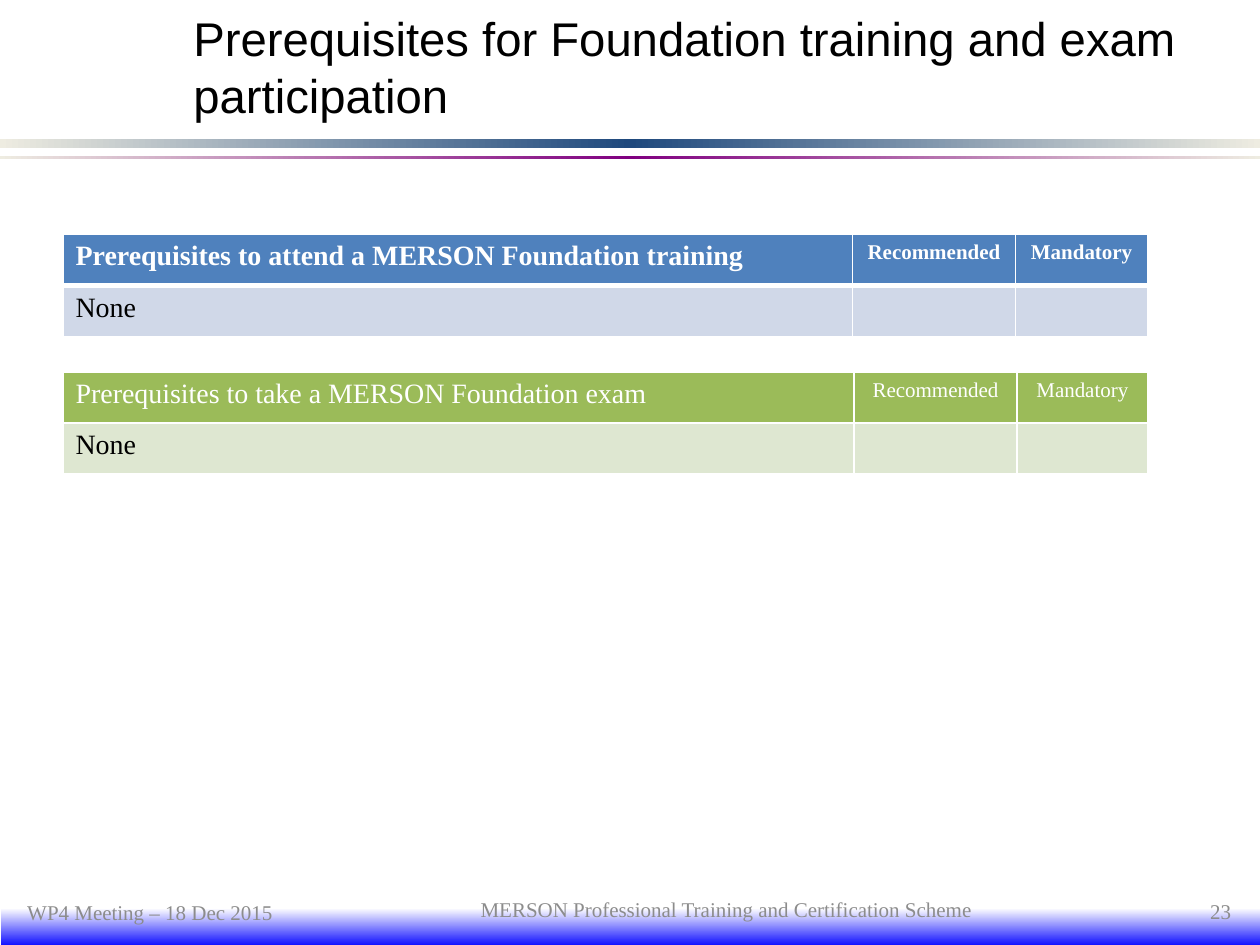
from lxml.etree import SubElement
from pptx import Presentation
from pptx.dml.color import RGBColor
from pptx.enum.shapes import MSO_SHAPE
from pptx.enum.text import MSO_ANCHOR, PP_ALIGN
from pptx.oxml.ns import qn
from pptx.util import Cm, Pt

COLOURS = {
    "white": "FFFFFF", "black": "000000", "grey": "8C8C8C",
    "footer blue": "0000FF", "cream": "EEECE1", "navy": "1F497D", "purple": "800080",
    "blue": "4F81BD", "pale blue": "D0D8E8", "green": "9BBB59", "pale green": "DEE7D1",
}


def colour(name):
    return RGBColor.from_string(COLOURS[name])


class SlideBuilder:
    """Holds the text style and the page being filled."""
    font = "Times New Roman"

    def __init__(self, page):
        self.page = page

    def style(self, frame, size, shade, align=PP_ALIGN.LEFT, bold=False, font=None):
        for para in frame.paragraphs:
            para.alignment = align
            for span in para.runs:
                span.font.name = font or self.font
                span.font.size = Pt(size)
                span.font.bold = bold
                span.font.color.rgb = colour(shade)

    def text(self, words, left, top, width, height, size, shade, **style):
        box = self.page.shapes.add_textbox(Cm(left), Cm(top), Cm(width), Cm(height))
        frame = box.text_frame
        frame.word_wrap = True
        frame.vertical_anchor = MSO_ANCHOR.MIDDLE
        frame.margin_left = frame.margin_right = Cm(0.2)
        frame.text = words
        self.style(frame, size, shade, **style)

    def gradient_bar(self, top, height, shades, angle=0, left=0):
        bar = self.page.shapes.add_shape(
            MSO_SHAPE.RECTANGLE, Cm(left), Cm(top), Cm(25.4), Cm(height))
        bar.shadow.inherit = False
        bar.line.fill.background()
        bar.fill.gradient()
        bar.fill.gradient_angle = angle
        # Replace the default stops with evenly spaced ones
        stops = bar.element.spPr.find(qn("a:gradFill")).find(qn("a:gsLst"))
        for stop in list(stops):
            stops.remove(stop)
        for index, shade in enumerate(shades):
            position = 100000 * index // (len(shades) - 1)
            stop = SubElement(stops, qn("a:gs"), pos=str(position))
            SubElement(stop, qn("a:srgbClr"), val=COLOURS[shade])

    def borders(self, cell, top, bottom):
        # Called before the fill, which must follow the lines
        properties = cell._tc.get_or_add_tcPr()
        for side, width in {"L": 1, "R": 1, "T": top, "B": bottom}.items():
            line = SubElement(properties, qn(f"a:ln{side}"), w=str(Pt(width)))
            fill = SubElement(line, qn("a:solidFill"))
            SubElement(fill, qn("a:srgbClr"), val=COLOURS["white"])

    def table(self, top, widths, heading, shade, bold, rule):
        rows = [[heading, "Recommended", "Mandatory"], ["None", "", ""]]
        grid = self.page.shapes.add_table(
            len(rows), len(widths), Cm(1.27), Cm(top), Cm(sum(widths)), Cm(2.06)).table
        for column, width in zip(grid.columns, widths):
            column.width = Cm(width)
        for row, words in enumerate(rows):
            header = row == 0
            for column, word in enumerate(words):
                cell = grid.cell(row, column)
                self.borders(cell, 1 if header else rule, rule if header else 1)
                cell.fill.solid()
                cell.fill.fore_color.rgb = colour(shade if header else f"pale {shade}")
                cell.text_frame.text = word
                self.style(cell.text_frame, 12 if column else 16,
                           "white" if header else "black",
                           align=PP_ALIGN.CENTER if column else PP_ALIGN.LEFT,
                           bold=bold and header)


def main():
    deck = Presentation()
    deck.slide_width, deck.slide_height = Cm(25.4), Cm(19.05)
    builder = SlideBuilder(deck.slides.add_slide(deck.slide_layouts[6]))

    # Footer band and the two rules under the title
    builder.gradient_bar(18.31, 0.8, ["white", "footer blue"], angle=270, left=0.02)
    builder.gradient_bar(2.81, 0.18, ["cream", "navy", "cream"])
    builder.gradient_bar(3.14, 0.07, ["cream", "purple", "cream"])

    # Title
    builder.text("Prerequisites for Foundation training and exam participation",
                 3.7, 0.4, 20.43, 1.88, 27, "black", font="Arial")

    # Prerequisite tables
    builder.table(4.73, [15.92, 3.28, 2.67],
                  "Prerequisites to attend a MERSON Foundation training", "blue", True, 3)
    builder.table(7.5, [15.95, 3.28, 2.64],
                  "Prerequisites to take a MERSON Foundation exam", "green", False, 1)

    # Footer texts
    builder.text("WP4 Meeting – 18 Dec 2015", 0.35, 18.04, 6.1, 0.69, 12, "grey")
    builder.text("MERSON Professional Training and Certification Scheme",
                 8.69, 18.01, 11.91, 0.64, 12, "grey", align=PP_ALIGN.CENTER)
    builder.text("23", 19.1, 18.02, 5.92, 0.71, 12, "grey", align=PP_ALIGN.RIGHT)

    deck.save("out.pptx")


if __name__ == "__main__":
    main()
